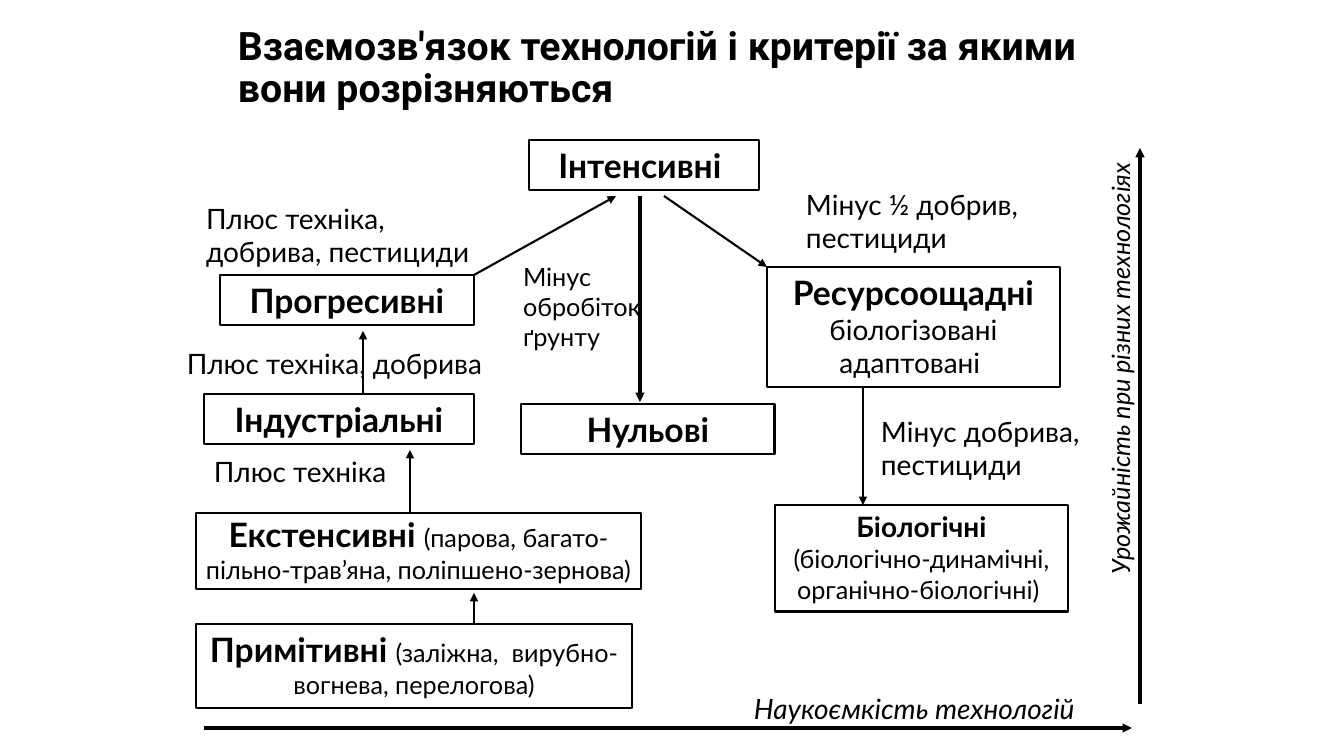
import pptx
import pptx.util
import pptx.dml.color
import pptx.enum.shapes
import pptx.enum.text
import pptx.oxml
import pptx.oxml.ns

EMU_PER_PX = 914400 / 100.8
ALIGN = pptx.enum.text.PP_ALIGN
ANCHOR = pptx.enum.text.MSO_ANCHOR


def px(length):
    return pptx.util.Emu(round(length * EMU_PER_PX))


def rgb(color):
    return pptx.dml.color.RGBColor.from_string(color)


def write(shape, runs, align=ALIGN.LEFT, anchor=ANCHOR.TOP, inset=(10, 5),
          font="Lato", color="000000", italic=False, line_spacing=None):
    """Fill a shape with one paragraph; runs are (text, size, bold)."""
    frame = shape.text_frame
    frame.word_wrap = True
    frame.auto_size = pptx.enum.text.MSO_AUTO_SIZE.NONE
    frame.vertical_anchor = anchor
    frame.margin_left = frame.margin_right = px(inset[0])
    frame.margin_top = frame.margin_bottom = px(inset[1])
    paragraph = frame.paragraphs[0]
    paragraph.alignment = align
    paragraph.space_before = pptx.util.Pt(0)
    if line_spacing:
        paragraph.line_spacing = line_spacing
    for text, size, bold in runs:
        run = paragraph.add_run()
        run.text = text
        run.font.name = font
        run.font.size = pptx.util.Pt(size)
        run.font.bold = bold
        run.font.italic = italic
        run.font.color.rgb = rgb(color)


class Diagram:
    ink = "000000"
    box_line = 2

    def __init__(self, presentation):
        self.slide = presentation.slides.add_slide(presentation.slide_layouts[5])

    def title(self, text, left, top, width, height):
        title = self.slide.shapes.title
        title.left, title.top = px(left), px(top)
        title.width, title.height = px(width), px(height)
        write(title, [(text, 28, True)], anchor=ANCHOR.MIDDLE, font="Roboto",
              color=self.ink, line_spacing=0.9)

    def box(self, runs, left, top, width, height, inset=(10, 5)):
        shape = self.slide.shapes.add_shape(
            pptx.enum.shapes.MSO_SHAPE.RECTANGLE,
            px(left), px(top), px(width), px(height))
        shape.shadow.inherit = False
        shape.fill.background()
        shape.line.color.rgb = rgb(self.ink)
        shape.line.width = pptx.util.Pt(self.box_line)
        write(shape, runs, align=ALIGN.CENTER, inset=inset, color=self.ink)

    def label(self, text, left, top, width, height, size=20, rotation=0, **style):
        shape = self.slide.shapes.add_textbox(px(left), px(top), px(width), px(height))
        shape.rotation = rotation
        write(shape, [(text, size, False)], color=self.ink, **style)

    def arrow(self, start, end, weight=1.5):
        connector = self.slide.shapes.add_connector(
            pptx.enum.shapes.MSO_CONNECTOR.STRAIGHT,
            px(start[0]), px(start[1]), px(end[0]), px(end[1]))
        connector.line.color.rgb = rgb(self.ink)
        connector.line.width = pptx.util.Pt(weight)
        head = pptx.oxml.parse_xml(
            f'<a:tailEnd {pptx.oxml.ns.nsdecls("a")} type="triangle"/>')
        connector.line._get_or_add_ln().append(head)
        properties = connector._element.spPr
        properties.append(pptx.oxml.parse_xml(
            f'<a:effectLst {pptx.oxml.ns.nsdecls("a")}/>'))


def main():
    presentation = pptx.Presentation()
    presentation.slide_width, presentation.slide_height = px(1344), px(756)
    diagram = Diagram(presentation)
    diagram.title("Взаємозв'язок технологій і критерії за якими вони розрізняються",
                  228, 21, 859, 95)

    for name, left, top, width in (
            ("Інтенсивні ", 529, 140, 230),
            ("Прогресивні", 220, 275, 254),
            ("Індустріальні", 204, 394, 270),
            ("Нульові", 521, 404, 254)):
        diagram.box([(name, 24, True)], left, top, width, 50)

    diagram.box([("Ресурсоощадні ", 24, True),
                 ("біологізовані адаптовані ", 20, False)], 767, 267, 293, 120)
    diagram.box([("Екстенсивні ", 24, True),
                 ("(парова, багато-пільно-трав’яна, поліпшено-зернова)", 18, False)],
                196, 513, 445, 76, inset=(0, 1))
    diagram.box([("Біологічні ", 20, True),
                 ("(біологічно-динамічні, органічно-біологічні) ", 18, False)],
                775, 505, 293, 107)
    diagram.box([("Примітивні ", 24, True),
                 ("(заліжна,  вирубно-вогнева, перелогова)", 18, False)],
                196, 624, 436, 84)

    diagram.label("Плюс техніка, добрива, пестициди", 196, 196, 293, 78)
    diagram.label("Мінус ½ добрив, пестициди", 806, 187, 231, 68, inset=(0, 0))
    diagram.label("Плюс техніка, добрива", 187, 347, 309, 33, inset=(0, 0))
    diagram.label("Плюс техніка", 204, 450, 293, 43)
    diagram.label("Мінус добрива, пестициди", 871, 409, 222, 78)
    diagram.label("Мінус обробіток ґрунту", 513, 256, 166, 101, size=18)

    diagram.label("Наукоємкість технологій", 744, 687, 357, 43, italic=True)
    diagram.label("Урожайність при різних технологіях", 858, 302, 524, 40,
                  size=18, rotation=270, italic=True)
    for start, end in (((204, 728), (1132, 728)),
                       ((1140, 704), (1140, 148)),
                       ((640, 196), (640, 402))):
        diagram.arrow(start, end, weight=2.25)

    for start, end in (((474, 624), (474, 593)),
                       ((410, 513), (410, 450)),
                       ((363, 394), (363, 331)),
                       ((474, 275), (616, 196)),
                       ((664, 196), (767, 267)),
                       ((863, 387), (863, 505))):
        diagram.arrow(start, end)

    presentation.save("out.pptx")


if __name__ == "__main__":
    main()
